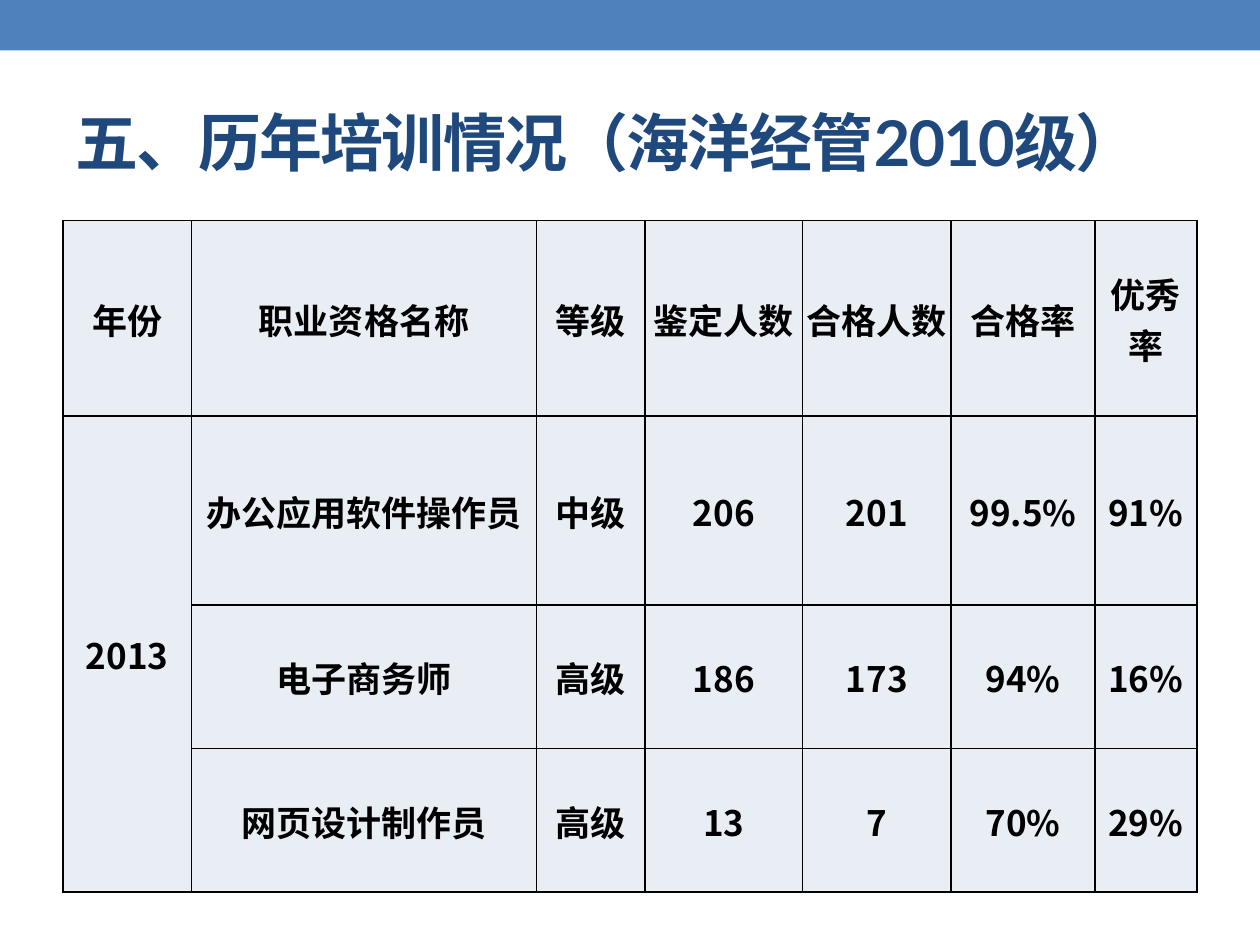
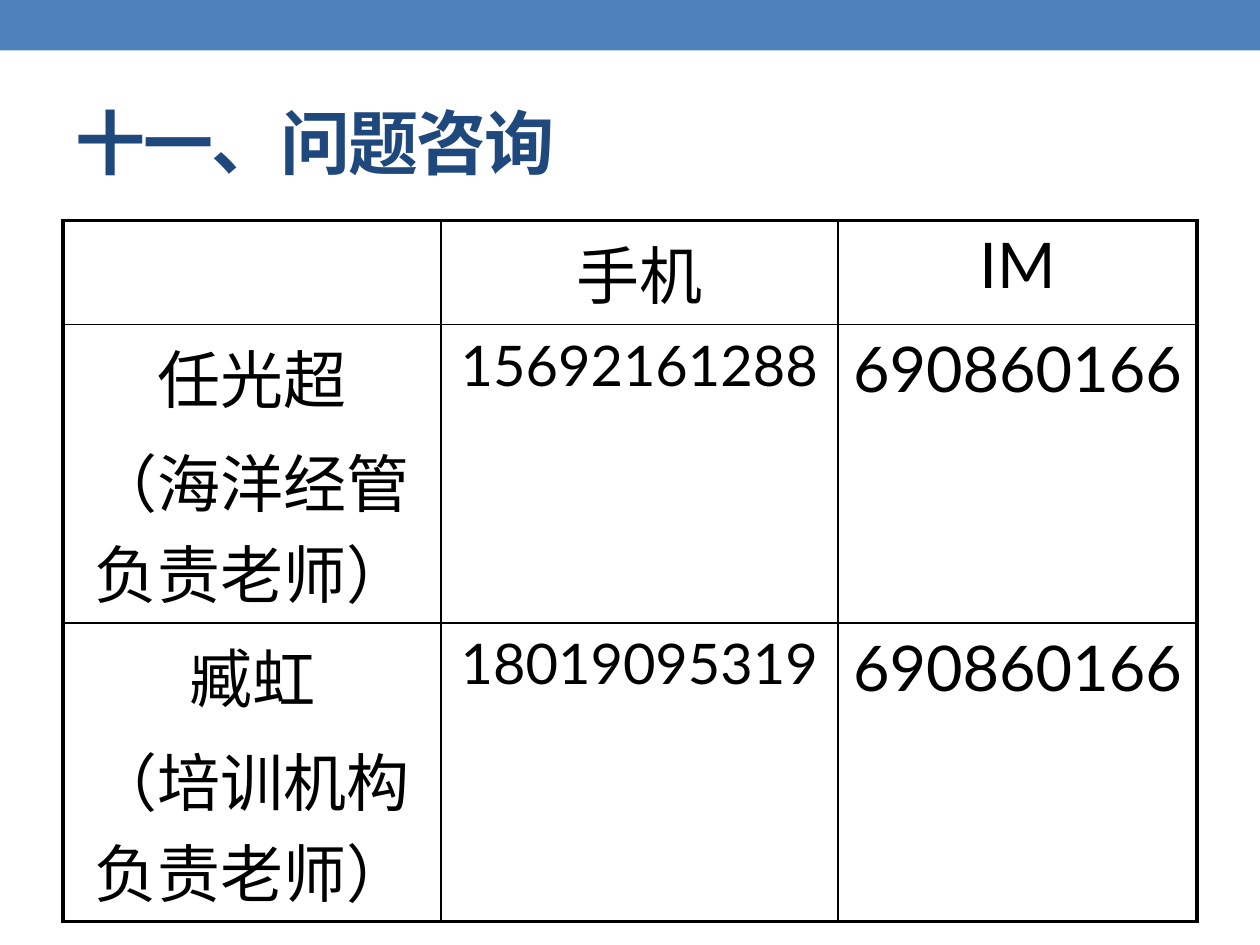
from lxml import etree
from pptx import Presentation
from pptx import util as u
from pptx.dml.color import RGBColor
from pptx.enum import shapes, text
from pptx.oxml.ns import qn

BLUE = RGBColor(0x4F, 0x81, 0xBD)
NAVY = RGBColor(0x1F, 0x49, 0x7D)
PALE = RGBColor(0xE9, 0xED, 0xF4)
BLACK = RGBColor(0, 0, 0)
LATIN = "Lato"
HAN = "Noto Sans CJK SC"
SCALE = 9144
TITLE_ONLY = 5

COURSES = [
    ["年份", "职业资格名称", "等级", "鉴定人数", "合格人数", "合格率", "优秀率"],
    ["2013", "办公应用软件操作员", "中级", "206", "201", "99.5%", "91%"],
    ["", "电子商务师", "高级", "186", "173", "94%", "16%"],
    ["", "网页设计制作员", "高级", "13", "7", "70%", "29%"],
]
CONTACTS = [
    ["", "手机", "IM"],
    ["任光超\n（海洋经管负责老师）", "15692161288", "690860166"],
    ["臧虹\n（培训机构负责老师）", "18019095319", "690860166"],
]


def px(n):
    return u.Emu(n * SCALE)


class Deck:
    def __init__(self):
        self.prs = Presentation()
        self.prs.slide_width = px(1000)
        self.prs.slide_height = px(750)
        self.slide = None

    def page(self, title, size):
        layout = self.prs.slide_layouts[TITLE_ONLY]
        self.slide = self.prs.slides.add_slide(layout)
        self.band()
        self.title(title, size)

    def band(self):
        bar = self.slide.shapes.add_shape(
            shapes.MSO_SHAPE.RECTANGLE, 0, 0, px(1000), px(40))
        bar.shadow.inherit = False
        bar.fill.solid()
        bar.fill.fore_color.rgb = BLUE
        bar.line.fill.background()

    def title(self, words, size):
        box = self.slide.shapes.title
        box.left, box.top, box.width, box.height = map(px, (50, 58, 900, 108))
        frame = box.text_frame
        frame.text = words
        frame.word_wrap = True
        frame.auto_size = text.MSO_AUTO_SIZE.NONE
        frame.vertical_anchor = text.MSO_ANCHOR.MIDDLE
        para = frame.paragraphs[0]
        para.alignment = text.PP_ALIGN.LEFT
        self.style(para, size, LATIN, NAVY, True).set("spc", "-100")

    def style(self, para, size, face, color, bold=False):
        font = para.font
        font.size = u.Pt(size)
        font.name = face
        font.bold = bold
        font.color.rgb = color
        props = para._p.get_or_add_pPr().find(qn("a:defRPr"))
        latin = props.find(qn("a:latin"))
        east = etree.Element(qn("a:ea"), typeface=HAN)
        latin.addnext(east)
        return props

    def edge(self, cell, side, width):
        props = cell._tc.get_or_add_tcPr()
        line = etree.SubElement(
            props, qn("a:ln" + side), w=str(u.Pt(width)))
        fill = etree.SubElement(line, qn("a:solidFill"))
        etree.SubElement(fill, qn("a:srgbClr"), val=str(BLACK))

    def table(self, data, cols, rows, size, face,
              bold=False, fill=None, rim=1, gap=0, tight=False):
        grid = self.slide.shapes.add_table(
            len(rows), len(cols), px(50), px(175),
            px(sum(cols)), px(sum(rows))).table
        grid.first_row = grid.horz_banding = False
        for col, width in zip(grid.columns, cols):
            col.width = px(width)
        for row, height in zip(grid.rows, rows):
            row.height = px(height)
        for r, line in enumerate(data):
            for c, words in enumerate(line):
                cell = grid.cell(r, c)
                cell.text = words
                if tight:
                    cell.vertical_anchor = text.MSO_ANCHOR.MIDDLE
                    cell.margin_left = cell.margin_right = px(1)
                    cell.margin_top, cell.margin_bottom = px(1), 0
                outer = {"L": c == 0, "R": c == len(cols) - 1,
                         "T": r == 0, "B": r == len(rows) - 1}
                for side, rimmed in outer.items():
                    self.edge(cell, side, rim if rimmed else 1)
                if fill is None:
                    cell.fill.background()
                else:
                    cell.fill.solid()
                    cell.fill.fore_color.rgb = fill
                for para in cell.text_frame.paragraphs:
                    para.alignment = text.PP_ALIGN.CENTER
                    para.space_before = u.Pt(gap)
                    self.style(para, size, face, BLACK, bold)
        return grid


def main():
    deck = Deck()

    deck.page("五、历年培训情况（海洋经管2010级）", 36)
    grid = deck.table(
        COURSES, [102, 274, 86, 125, 118, 114, 81], [155, 150, 114, 114],
        20, HAN, bold=True, fill=PALE, tight=True)
    grid.cell(1, 0).merge(grid.cell(3, 0))

    deck.page("十一、问题咨询", 40)
    grid = deck.table(
        CONTACTS, [300, 315, 285], [82, 142, 178],
        36, LATIN, rim=2.25, gap=7.2)
    for row in (1, 2):
        phone = grid.cell(row, 1).text_frame.paragraphs[0]
        phone.font.size = u.Pt(32)

    deck.prs.save("out.pptx")


if __name__ == "__main__":
    main()
